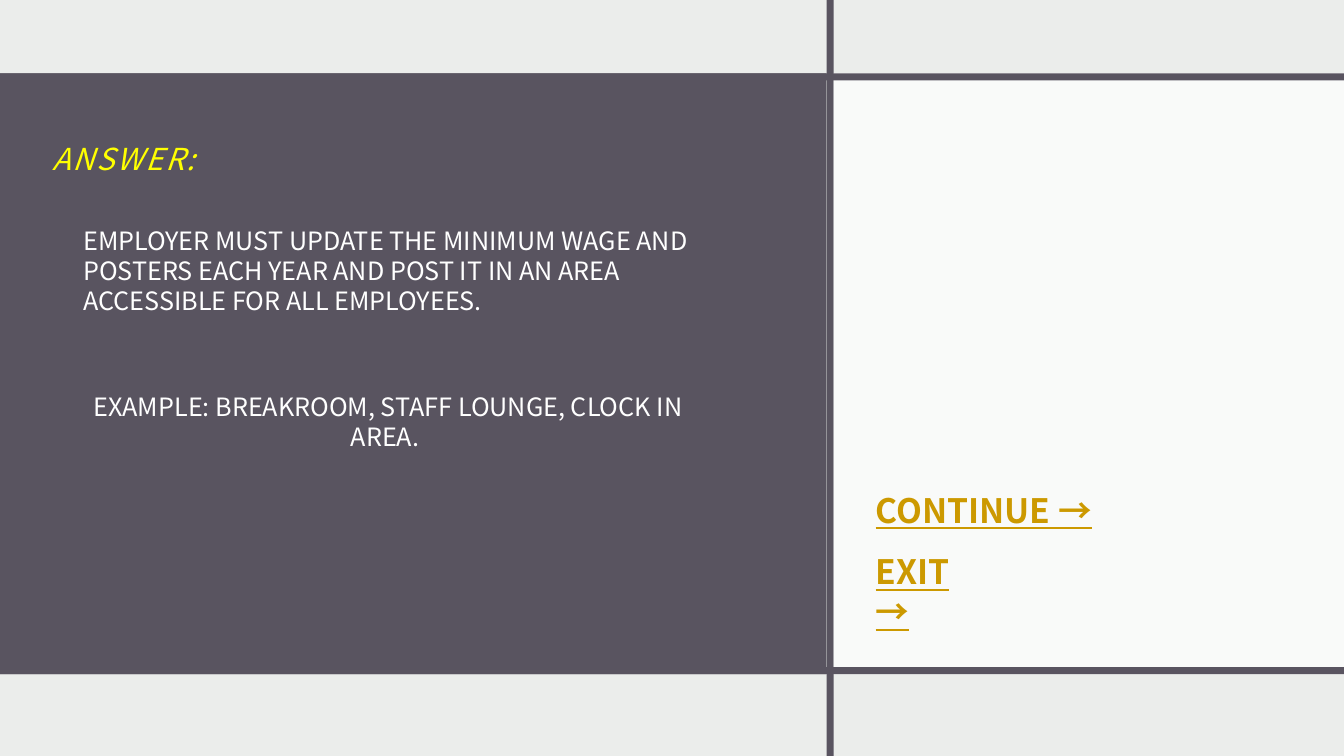
from pptx import Presentation
from pptx.dml.color import RGBColor as RGB
from pptx.enum.shapes import MSO_SHAPE as Shape
from pptx.enum.text import MSO_ANCHOR as Anchor, PP_ALIGN as Align
from pptx.oxml import parse_xml
from pptx.oxml.ns import nsdecls
from pptx.util import Cm, Pt

FONT = "Noto Sans CJK JP"
PALE = RGB(0xEB, 0xED, 0xEB)
PLUM = RGB(0x59, 0x54, 0x60)
WHITE = RGB(0xFF, 0xFF, 0xFF)
YELLOW = RGB(0xFF, 0xFF, 0x00)
GOLD = RGB(0xCC, 0x99, 0x00)

WIDE, HIGH = 33.87, 19.05
TOP, BASE = 1.85, 16.99
SPLIT, BAR = 20.83, 0.18

HEAD = {"size": Pt(21.6), "italic": True, "bold": False}
BODY = {"size": Pt(18)}
LINK = {"size": Pt(24), "bold": True, "underline": True}


def add_rect(slide, x, y, w, h, color, alpha=None):
    """Add a plain block; alpha is its opacity in percent."""
    rect = slide.shapes.add_shape(Shape.RECTANGLE, Cm(x), Cm(y), Cm(w), Cm(h))
    rect.shadow.inherit = False
    rect.line.fill.background()
    rect.fill.solid()
    rect.fill.fore_color.rgb = color
    if alpha is not None:
        tint = rect.fill._xPr.find(".//{*}srgbClr")
        tint.append(parse_xml(f'<a:alpha {nsdecls("a")} val="{alpha * 1000}"/>'))


def set_text(frame, text, style, color, lead, align=Align.LEFT):
    frame.word_wrap = True
    para = frame.paragraphs[0]
    para.alignment = align
    para.line_spacing = Pt(lead)
    run = para.add_run()
    run.text = text
    for key, value in style.items():
        setattr(run.font, key, value)
    run.font.name = FONT
    run.font.color.rgb = color
    return run


def add_text(slide, x, y, w, h, *words):
    box = slide.shapes.add_textbox(Cm(x), Cm(y), Cm(w), Cm(h))
    set_text(box.text_frame, *words)


def add_title(slide, text):
    title = slide.shapes.title
    place = {"left": 1.02, "top": 3.3, "width": 16.69, "height": 1.17}
    for key, value in place.items():
        setattr(title, key, Cm(value))
    frame = title.text_frame
    frame.vertical_anchor = Anchor.MIDDLE
    frame.margin_left = frame.margin_right = Cm(0.3)
    frame.margin_top = frame.margin_bottom = 0
    run = set_text(frame, text, HEAD, YELLOW, 32.4)
    run.font._element.set("spc", "150")


def main():
    deck = Presentation()
    deck.slide_width, deck.slide_height = Cm(WIDE), Cm(HIGH)
    slide = deck.slides.add_slide(deck.slide_layouts[5])
    slide.background.fill.solid()
    slide.background.fill.fore_color.rgb = PALE

    edge = SPLIT + BAR
    add_rect(slide, 0, TOP, SPLIT, BASE - TOP, PLUM)
    add_rect(slide, SPLIT, 0, BAR, HIGH, PLUM)
    add_rect(slide, edge, TOP, WIDE - edge, BASE - TOP, WHITE, 75)
    for y in (TOP, BASE - BAR):
        add_rect(slide, 0, y, WIDE, BAR, PLUM)

    # The title must sit above the dark panel.
    slide.shapes._spTree.append(slide.shapes.title._element)
    add_title(slide, "ANSWER:")
    add_text(slide, 21.82, 12.22, 10.36, 1.27, "CONTINUE →", LINK, GOLD, 28.6)
    add_text(slide, 1.85, 5.55, 16.71, 2.57,
             "EMPLOYER MUST UPDATE THE MINIMUM WAGE AND POSTERS EACH YEAR "
             "AND POST IT IN AN AREA ACCESSIBLE FOR ALL EMPLOYEES.",
             BODY, WHITE, 21.4)
    add_text(slide, 1.85, 9.74, 15.85, 1.8,
             "EXAMPLE: BREAKROOM, STAFF LOUNGE, CLOCK IN AREA. ",
             BODY, WHITE, 21.4, Align.CENTER)
    add_text(slide, 21.82, 13.77, 3, 2.2, "EXIT →", LINK, GOLD, 28.6)
    deck.save("out.pptx")


if __name__ == "__main__":
    main()
